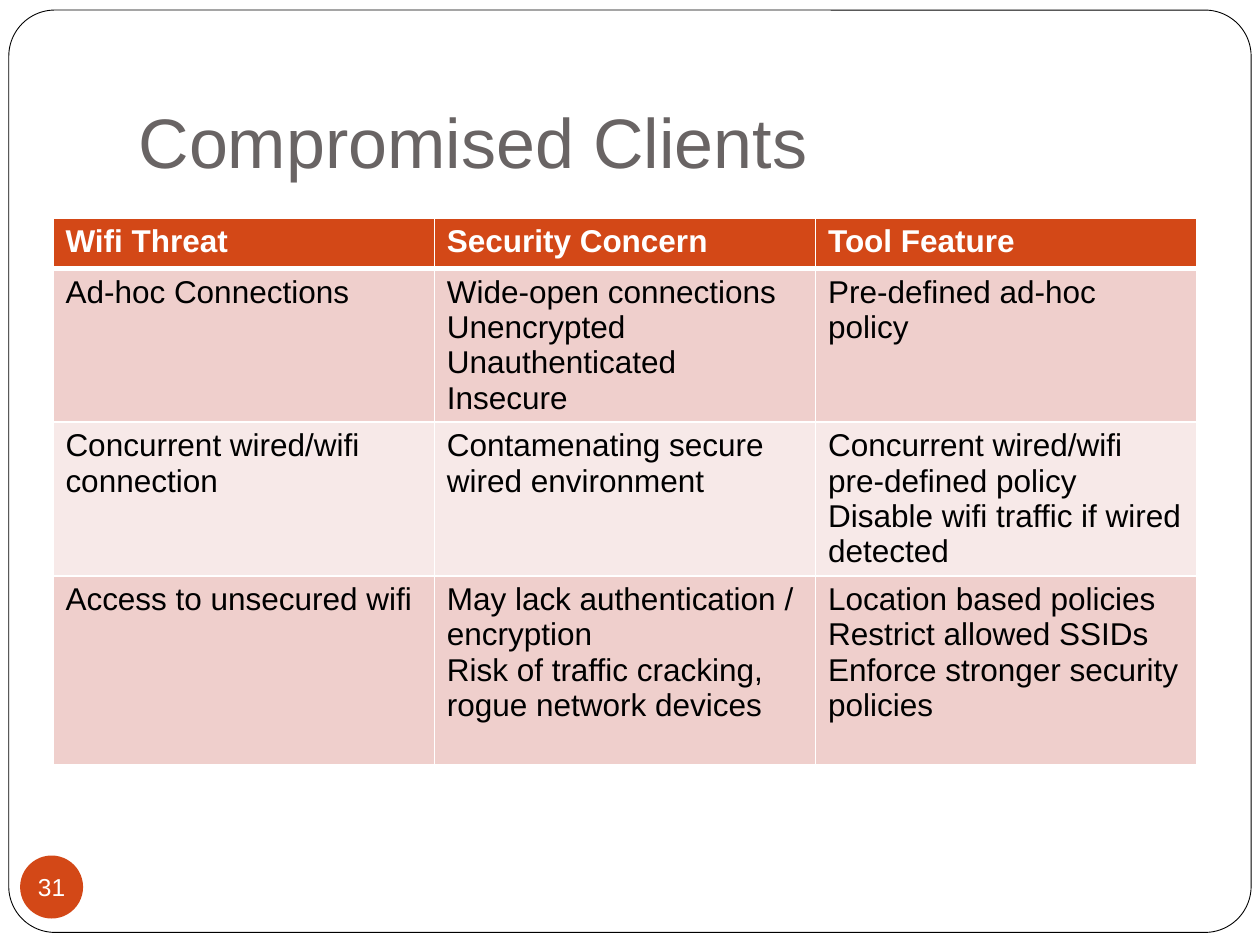
from lxml.etree import SubElement
from pptx import Presentation
from pptx.dml.color import RGBColor
from pptx.enum.shapes import MSO_SHAPE as Preset
from pptx.enum.text import MSO_ANCHOR as Anchor, PP_ALIGN as Align
from pptx.oxml.ns import qn
from pptx.util import Inches, Pt

COLORS = {
    "white": "FFFFFF",
    "black": "000000",
    "title": "696464",
    "accent": "D34817",
    "band_dark": "EFCFCC",
    "band_light": "F7E9E8",
}
ROW_HEIGHTS = [0.4, 1.22, 1.22, 1.5]
THREATS = [
    [["Wifi Threat"], ["Security Concern"], ["Tool Feature"]],
    [
        ["Ad-hoc Connections"],
        ["Wide-open connections", "Unencrypted", "Unauthenticated", "Insecure"],
        ["Pre-defined ad-hoc policy"],
    ],
    [
        ["Concurrent wired/wifi connection"],
        ["Contamenating secure wired environment"],
        ["Concurrent wired/wifi pre-defined policy", "Disable wifi traffic if wired detected"],
    ],
    [
        ["Access to unsecured wifi"],
        ["May lack authentication / encryption", "Risk of traffic cracking, rogue network devices"],
        ["Location based policies", "Restrict allowed SSIDs", "Enforce stronger security policies"],
    ],
]


def color(name):
    """Return the palette colour with this name."""
    return RGBColor.from_string(COLORS[name])


def write(frame, lines, size, tint, bold=False, align=Align.LEFT):
    """Write each line as a paragraph of the text frame."""
    for index, line in enumerate(lines):
        para = frame.paragraphs[0] if index == 0 else frame.add_paragraph()
        para.alignment = align
        span = para.add_run()
        span.text = line
        for name, value in {"name": "Arial", "size": Pt(size), "bold": bold}.items():
            setattr(span.font, name, value)
        span.font.color.rgb = color(tint)


def set_format(target, **values):
    """Set each named format value on the target."""
    for name, value in values.items():
        setattr(target, name, value)


def add_filled(page, preset, box, tint):
    """Add a preset shape with a plain fill and no shadow."""
    shape = page.shapes.add_shape(preset, *map(Inches, box))
    shape.shadow.inherit = False
    shape.fill.solid()
    shape.fill.fore_color.rgb = color(tint)
    return shape


def add_frame(page, box):
    """Place the rounded page frame behind everything else."""
    frame = add_filled(page, Preset.ROUNDED_RECTANGLE, box, "white")
    frame.adjustments[0] = 0.05
    frame.line.color.rgb = color("black")
    frame.line.width = Pt(0.5)
    frame.element.getparent().insert(2, frame.element)


def add_title(page, box, text):
    """Place the title placeholder in the box."""
    title = page.shapes.title
    left, top, width, height = map(Inches, box)
    set_format(title, left=left, top=top, width=width, height=height)
    set_format(
        title.text_frame,
        vertical_anchor=Anchor.BOTTOM,
        margin_left=Inches(0.1),
        margin_right=Inches(0.1),
        margin_top=Inches(0.05),
        margin_bottom=Inches(0.1),
        word_wrap=True,
    )
    write(title.text_frame, [text], 40, "title")


def add_borders(cell, widths):
    """Draw white cell borders with a width in points for each side."""
    properties = cell._tc.get_or_add_tcPr()
    for side, width in widths.items():
        line = SubElement(properties, qn(f"a:ln{side}"), w=str(Pt(width)))
        fill = SubElement(line, qn("a:solidFill"))
        SubElement(fill, qn("a:srgbClr"), val=COLORS["white"])


def add_threat_table(page, box):
    """Place the banded threat table in the box."""
    shape = page.shapes.add_table(len(THREATS), len(THREATS[0]), *map(Inches, box))
    table = shape.table
    for row, height in zip(table.rows, ROW_HEIGHTS):
        row.height = Inches(height)
    for r, texts in enumerate(THREATS):
        header = r == 0
        band = "accent" if header else "band_dark" if r % 2 else "band_light"
        widths = {"L": 1, "R": 1, "T": 3 if r == 1 else 1, "B": 3 if header else 1}
        for c, lines in enumerate(texts):
            cell = table.cell(r, c)
            add_borders(cell, widths)
            cell.fill.solid()
            cell.fill.fore_color.rgb = color(band)
            write(cell.text_frame, lines, 18, "white" if header else "black", header)


def add_page_number(page, box, number):
    """Place the round page number badge in the box."""
    badge = add_filled(page, Preset.OVAL, box, "accent")
    badge.line.fill.background()
    set_format(
        badge.text_frame,
        vertical_anchor=Anchor.MIDDLE,
        margin_left=0,
        margin_right=0,
        margin_top=0,
        margin_bottom=0,
        word_wrap=False,
    )
    write(badge.text_frame, [number], 14, "white", align=Align.CENTER)


def main():
    """Build the slide and save the deck."""
    deck = Presentation()
    set_format(deck, slide_width=Inches(10), slide_height=Inches(7.5))
    page = deck.slides.add_slide(deck.slide_layouts[5])
    add_frame(page, (0.07, 0.08, 9.86, 7.32))
    add_title(page, (1, 0.3, 8.5, 1.25), "Compromised Clients")
    add_threat_table(page, (0.42, 1.73, 9.08, sum(ROW_HEIGHTS)))
    add_page_number(page, (0.16, 6.79, 0.5, 0.5), "31")
    deck.save("out.pptx")


if __name__ == "__main__":
    main()
